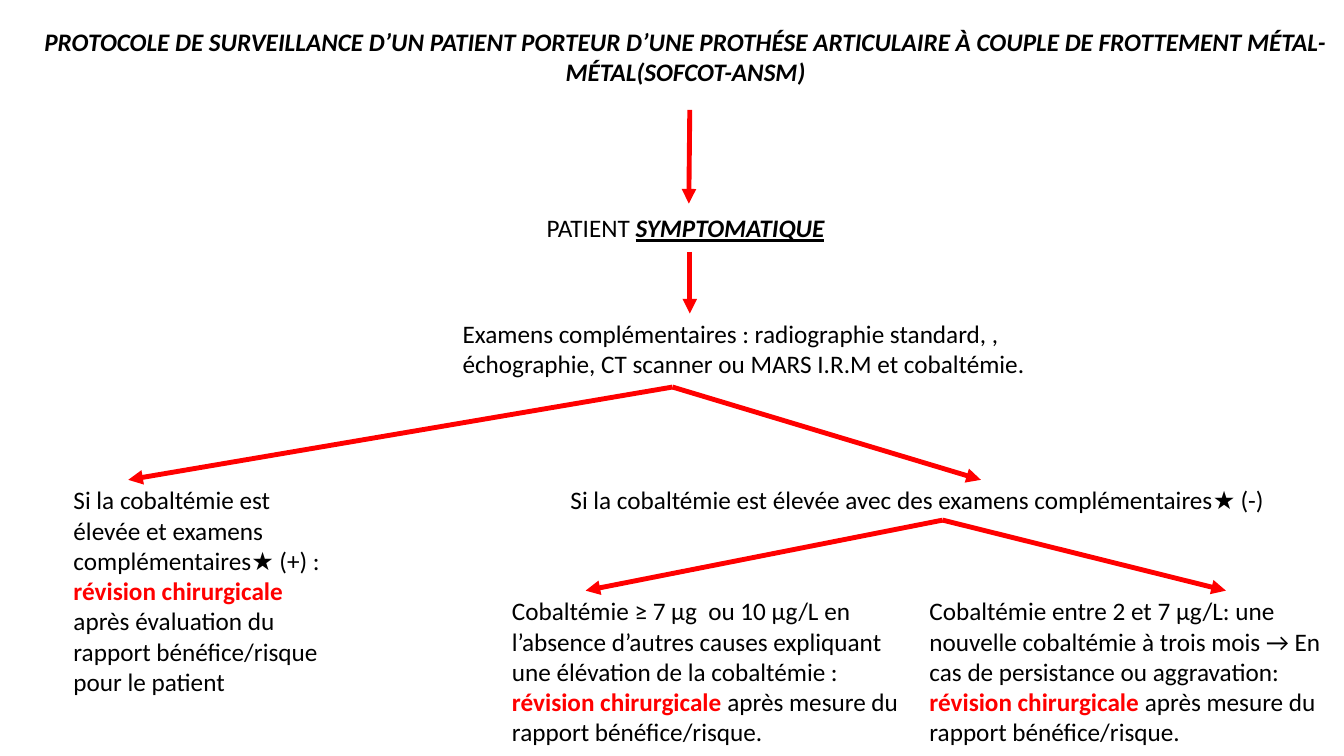
from lxml import etree
from pptx import Presentation
from pptx.dml.color import RGBColor
from pptx.enum.shapes import MSO_CONNECTOR
from pptx.enum.text import MSO_ANCHOR, MSO_AUTO_SIZE, PP_ALIGN
from pptx.oxml.ns import qn
from pptx.util import Inches, Pt

STRAIGHT = MSO_CONNECTOR.STRAIGHT
TOP = MSO_ANCHOR.TOP
NO_FIT = MSO_AUTO_SIZE.NONE
LEFT, CENTER = PP_ALIGN.LEFT, PP_ALIGN.CENTER
BOTTOM_SITE = 2
TITLE_ONLY = 5

WIDTH, HEIGHT = Inches(13.33), Inches(7.5)
COLUMN, ROW = WIDTH / 100, HEIGHT / 100
BLACK, RED = "000000", "FF0000"
FONT = "Calibri"
REVISION = ("révision chirurgicale ", {"color": RED, "bold": True})
BENEFIT = ("après mesure du rapport bénéfice/risque.", {})


def color_of(value):
    """Turn a hex string into a colour."""
    return RGBColor.from_string(value)


def to_length(column, row):
    """Turn a grid position into slide lengths."""
    return round(column * COLUMN), round(row * ROW)


def add_span(para, text, color=BLACK, size=18, bold=False, italic=False, underline=False):
    """Append formatted text to a paragraph."""
    span = para.add_run()
    span.text = text
    font = span.font
    font.name, font.size = FONT, Pt(size)
    font.bold, font.italic, font.underline = bold, italic, underline
    font.color.rgb = color_of(color)


def write_spans(shape, spans, align=LEFT):
    """Fill a shape with one wrapped paragraph of spans."""
    frame = shape.text_frame
    frame.word_wrap = True
    frame.auto_size = NO_FIT
    frame.vertical_anchor = TOP
    para = frame.paragraphs[0]
    para.alignment = align
    for text, style in spans:
        add_span(para, text, **style)


def add_arrow(page, start, end, parent=None):
    """Draw a red arrow, joined to the parent's bottom side if one is given."""
    arrow = page.shapes.add_connector(STRAIGHT, *to_length(*start), *to_length(*end))
    if parent is not None:
        arrow.begin_connect(parent, BOTTOM_SITE)
    arrow.line.color.rgb = color_of(RED)
    arrow.line.width = Pt(3.5)
    etree.SubElement(arrow.line._get_or_add_ln(), qn("a:tailEnd"), type="triangle")
    etree.SubElement(arrow._element.spPr, qn("a:effectLst"))


def add_header(page, box):
    """Place the protocol title in its box."""
    title = page.shapes.title
    left, top, width, height = box
    title.left, title.top = to_length(left, top)
    title.width, title.height = to_length(width, height)
    text = ("PROTOCOLE DE SURVEILLANCE D’UN PATIENT PORTEUR D’UNE PROTHÉSE ARTICULAIRE "
            "À COUPLE DE FROTTEMENT MÉTAL-MÉTAL(SOFCOT-ANSM)")
    write_spans(title, [(text, {"bold": True, "italic": True})], CENTER)


def add_step(page, box, spans, start, tip, align=LEFT, gap=0, parent=None):
    """Place a step and the arrow reaching its top at a share of its width."""
    left, top, width, height = box
    step = page.shapes.add_textbox(*to_length(left, top), *to_length(width, height))
    write_spans(step, spans, align)
    add_arrow(page, start, (left + tip * width, top - gap), parent)
    return step


def add_examination(page, box):
    """Place the patient's status and the examinations that follow."""
    left, top, width, height = box
    axis = left + 0.4 * width
    add_step(page, (left + 5.1, top, 24.46, 5.33),
             [("PATIENT ", {}),
              ("SYMPTOMATIQUE", {"bold": True, "italic": True, "underline": True})],
             (axis, top - 12.94), 0.51, align=CENTER, gap=0.54)
    add_step(page, (left, top + 14, width, height - 14),
             [("Examens complémentaires : radiographie standard, , échographie, "
               "CT scanner ou MARS I.R.M et cobaltémie.", {})],
             (axis, top + 5.86), 0.4)


def add_decisions(page, box, fork):
    """Place both outcomes of the examinations and the cobalt thresholds."""
    left, top, width, height = box
    add_step(page, (left, top, 20.93, 29.6),
             [("Si la cobaltémie est élevée et examens complémentaires★ (+) : ", {}),
              REVISION,
              ("après évaluation du rapport bénéfice/risque pour le patient", {})],
             fork, 0.23)
    negative = (left + 36.98, top, 56.86, 5.33)
    parent = add_step(page, negative,
                      [("Si la cobaltémie est élevée avec des examens complémentaires★ (-)", {})],
                      fork, 0.55)
    start = (negative[0] + negative[2] / 2, top + negative[3])
    thresholds = [
        (32.63, 31.06, 0.2, "Cobaltémie ≥ 7 μg  ou 10 μg/L en l’absence d’autres causes "
                            "expliquant une élévation de la cobaltémie : "),
        (63.69, 31.66, 0.72, "Cobaltémie entre 2 et 7 μg/L: une nouvelle cobaltémie à trois "
                             "mois → En cas de persistance ou aggravation:  "),
    ]
    drop = 14.66
    for offset, span_width, tip, text in thresholds:
        add_step(page, (left + offset, top + drop, span_width, height - drop),
                 [(text, {}), REVISION, BENEFIT], start, tip, parent=parent)


def main():
    """Build the deck and save it."""
    deck = Presentation()
    deck.slide_width, deck.slide_height = WIDTH, HEIGHT
    page = deck.slides.add_slide(deck.slide_layouts[TITLE_ONLY])
    add_header(page, (1.95, 2.8, 98.12, 9.47))
    add_examination(page, (33.68, 27.47, 44.11, 27.47))
    add_decisions(page, (4.73, 63.47, 95.27, 36.26), fork=(50.04, 51.2))
    deck.save("out.pptx")


if __name__ == "__main__":
    main()
